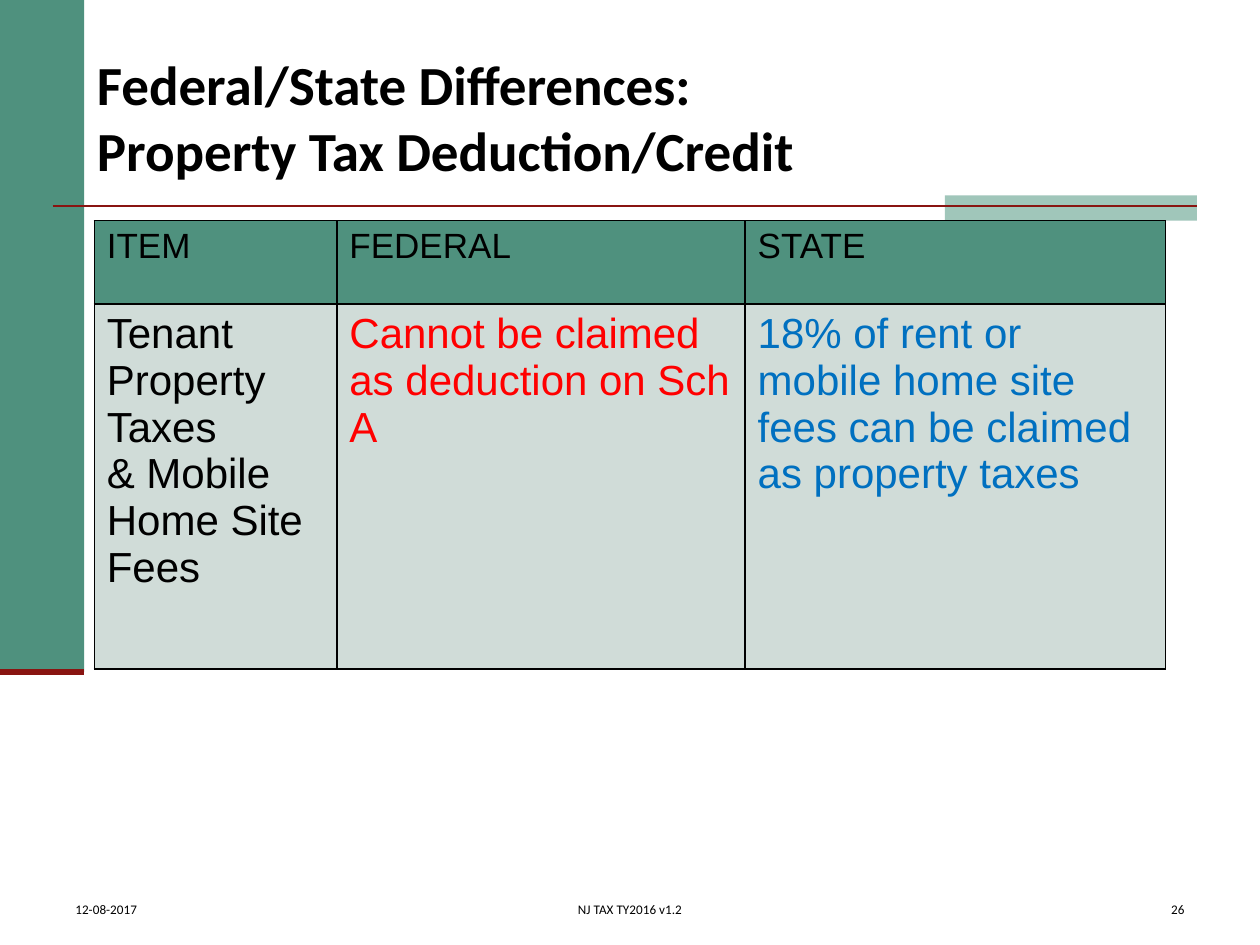
from typing import NamedTuple

from lxml import etree
from pptx import Presentation
from pptx.dml.color import RGBColor
from pptx.enum import shapes, text
from pptx.oxml import ns
from pptx.util import Cm, Pt

BLACK = RGBColor(0x00, 0x00, 0x00)
GREEN = RGBColor(0x4F, 0x91, 0x7E)
LIGHT_GREEN = RGBColor(0xA0, 0xC6, 0xBA)
PALE_GREEN = RGBColor(0xD0, 0xDC, 0xD8)
MAROON = RGBColor(0x89, 0x14, 0x11)
RED = RGBColor(0xFF, 0x00, 0x00)
BLUE = RGBColor(0x00, 0x70, 0xC0)


class Block(NamedTuple):
    left: float
    top: float
    width: float
    height: float
    color: RGBColor


class Rule(NamedTuple):
    left: float
    right: float
    y: float
    weight: float


class Footer(NamedTuple):
    left: float
    width: float
    wording: str
    align: text.PP_ALIGN


class Entry(NamedTuple):
    wording: str
    size: float
    color: RGBColor
    fill: RGBColor


BLOCKS = [Block(0, 0, 1.7, 13.55, GREEN), Block(19.05, 3.94, 5.08, 0.51, LIGHT_GREEN)]
RULES = [Rule(1.06, 24.13, 4.15, 1.5), Rule(0, 1.7, 13.55, 3.5)]
FOOTERS = [
    Footer(1.27, 5.5, "12-08-2017", text.PP_ALIGN.LEFT),
    Footer(8.41, 8.58, "NJ TAX TY2016 v1.2", text.PP_ALIGN.CENTER),
    Footer(18.84, 5.29, "26", text.PP_ALIGN.RIGHT),
]
COLUMN_WIDTHS = [4.89, 8.23, 8.47]
ROW_HEIGHTS = [1.68, 7.36]
COMPARISON = [
    [Entry(heading, 20, BLACK, GREEN) for heading in ("ITEM", "FEDERAL", "STATE")],
    [
        Entry("Tenant\nProperty Taxes\n& Mobile Home Site Fees", 24, BLACK, PALE_GREEN),
        Entry("Cannot be claimed as deduction on Sch A", 24, RED, PALE_GREEN),
        Entry("18% of rent or mobile home site fees can be claimed as property taxes",
              24, BLUE, PALE_GREEN),
    ],
]


def set_font(paragraph, name: str, size: float, color: RGBColor, bold: bool = False) -> None:
    font = paragraph.font
    font.name, font.size, font.bold = name, Pt(size), bold
    font.color.rgb = color


def add_block(slide, block: Block) -> None:
    rectangle = slide.shapes.add_shape(
        shapes.MSO_SHAPE.RECTANGLE, Cm(block.left), Cm(block.top), Cm(block.width), Cm(block.height))
    rectangle.shadow.inherit = False
    rectangle.fill.solid()
    rectangle.fill.fore_color.rgb = block.color
    rectangle.line.fill.background()


def add_rule(slide, rule: Rule) -> None:
    line = slide.shapes.add_connector(
        shapes.MSO_CONNECTOR.STRAIGHT, Cm(rule.left), Cm(rule.y), Cm(rule.right), Cm(rule.y))
    line.line.color.rgb = MAROON
    line.line.width = Pt(rule.weight)
    etree.SubElement(line._element.spPr, ns.qn("a:effectLst"))


def add_footer(slide, footer: Footer) -> None:
    frame = slide.shapes.add_textbox(
        Cm(footer.left), Cm(17.78), Cm(footer.width), Cm(0.84)).text_frame
    frame.word_wrap = True
    frame.vertical_anchor = text.MSO_ANCHOR.BOTTOM
    frame.text = footer.wording
    frame.paragraphs[0].alignment = footer.align
    set_font(frame.paragraphs[0], "Calibri", 7.5, BLACK)


def format_title(title) -> None:
    title.left, title.top, title.width, title.height = Cm(1.7), Cm(0.76), Cm(22.43), Cm(3.18)
    frame = title.text_frame
    frame.auto_size = text.MSO_AUTO_SIZE.NONE
    frame.vertical_anchor = text.MSO_ANCHOR.MIDDLE
    frame.text = "Federal/State Differences:\vProperty Tax Deduction/Credit"
    frame.paragraphs[0].alignment = text.PP_ALIGN.LEFT
    set_font(frame.paragraphs[0], "Calibri", 31.5, BLACK, bold=True)


def add_borders(cell) -> None:
    """Put a thin black line on each side; borders must precede the cell's fill."""
    properties = cell._tc.get_or_add_tcPr()
    for position, side in enumerate(("lnL", "lnR", "lnT", "lnB")):
        border = etree.Element(ns.qn(f"a:{side}"), w=str(Pt(1)))
        fill = etree.SubElement(border, ns.qn("a:solidFill"))
        etree.SubElement(fill, ns.qn("a:srgbClr"), val=str(BLACK))
        properties.insert(position, border)


def fill_cell(cell, entry: Entry) -> None:
    cell.fill.solid()
    cell.fill.fore_color.rgb = entry.fill
    cell.text = entry.wording
    for paragraph in cell.text_frame.paragraphs:
        set_font(paragraph, "Arial", entry.size, entry.color)
    add_borders(cell)


def add_comparison(slide) -> None:
    table = slide.shapes.add_table(
        len(ROW_HEIGHTS), len(COLUMN_WIDTHS), Cm(1.9), Cm(4.45),
        Cm(sum(COLUMN_WIDTHS)), Cm(sum(ROW_HEIGHTS))).table
    table.first_row = table.horz_banding = False
    for column, width in zip(table.columns, COLUMN_WIDTHS):
        column.width = Cm(width)
    for row, height, entries in zip(table.rows, ROW_HEIGHTS, COMPARISON):
        row.height = Cm(height)
        for cell, entry in zip(row.cells, entries):
            fill_cell(cell, entry)


def main() -> None:
    presentation = Presentation()
    presentation.slide_width, presentation.slide_height = Cm(25.4), Cm(19.05)
    slide = presentation.slides.add_slide(presentation.slide_layouts[5])
    for block in BLOCKS:
        add_block(slide, block)
    for rule in RULES:
        add_rule(slide, rule)
    format_title(slide.shapes.title)
    add_comparison(slide)
    for footer in FOOTERS:
        add_footer(slide, footer)
    presentation.save("out.pptx")


if __name__ == "__main__":
    main()
